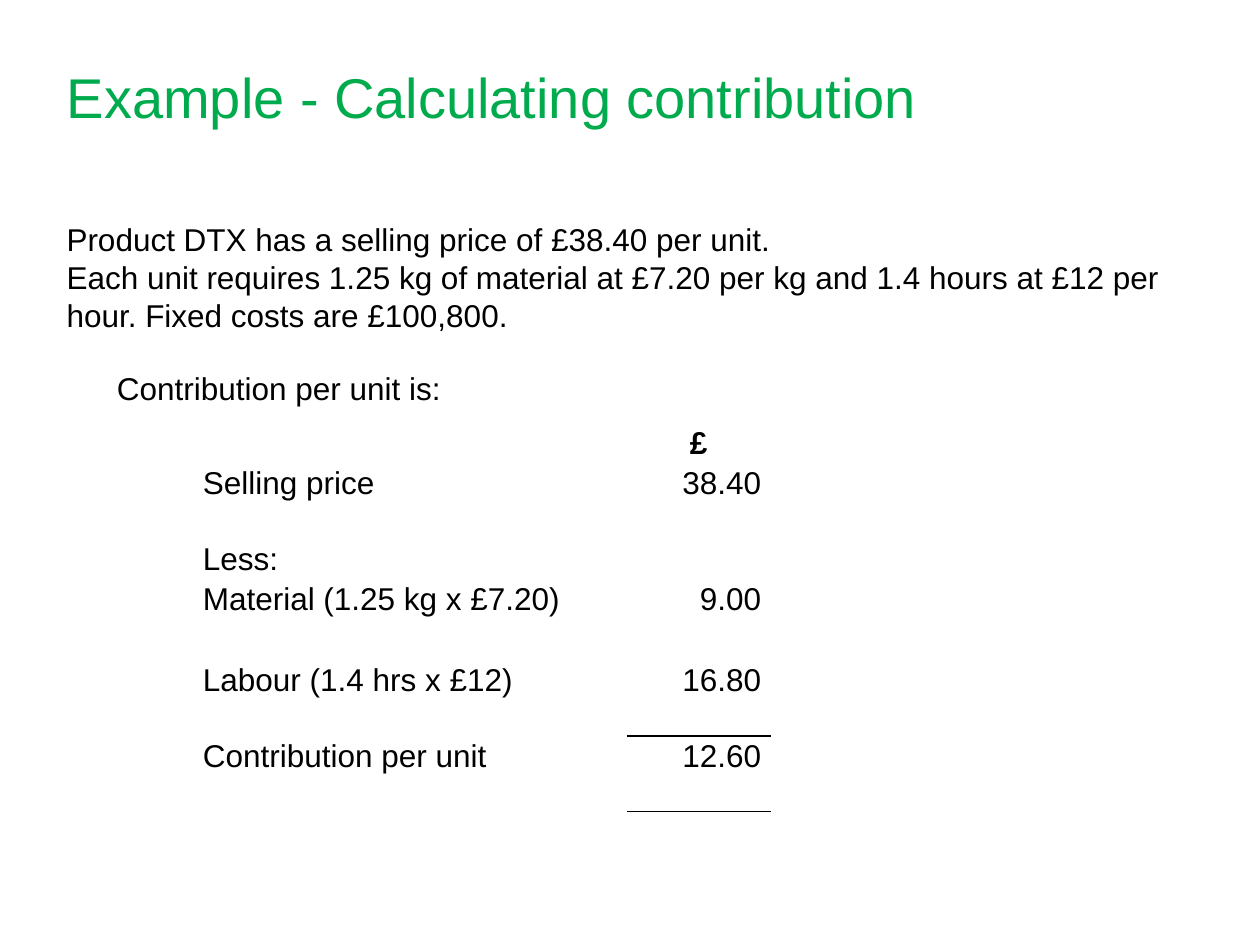
"""Build a slide that works out contribution per unit from a short costing example."""
from lxml import etree
from pptx import Presentation
from pptx import util as u
from pptx.dml.color import RGBColor
from pptx.enum import text
from pptx.oxml.ns import qn

COLOURS = {"heading": "00AB4E", "ink": "000000"}
WIDTH, HEIGHT = 10, 7.5
MARGIN = 0.043 * WIDTH
CONTENT = WIDTH - 2 * MARGIN
LEFT, CENTRE, RIGHT = text.PP_ALIGN.LEFT, text.PP_ALIGN.CENTER, text.PP_ALIGN.RIGHT


def write(paragraph, words, size=18, colour="ink", bold=False):
    span = paragraph.add_run()
    span.text = words
    span.font.name = "Arial"
    span.font.size = u.Pt(size)
    span.font.bold = bold
    span.font.color.rgb = RGBColor.from_string(COLOURS[colour])


def rule(cell, side):
    line = etree.SubElement(cell._tc.get_or_add_tcPr(), qn(f"a:{side}"), w=str(u.Pt(1)))
    fill = etree.SubElement(line, qn("a:solidFill"))
    etree.SubElement(fill, qn("a:srgbClr"), val=COLOURS["ink"])


deck = Presentation()
deck.slide_width, deck.slide_height = u.Inches(WIDTH), u.Inches(HEIGHT)
page = deck.slides.add_slide(deck.slide_layouts[5])

title = page.shapes.title
title.left, title.top = u.Inches(MARGIN), u.Inches(0.13)
title.width, title.height = u.Inches(CONTENT), u.Inches(1.26)
title.text_frame.vertical_anchor = text.MSO_ANCHOR.MIDDLE
title.text_frame.paragraphs[0].alignment = LEFT
write(title.text_frame.paragraphs[0], "Example - Calculating contribution", 32, "heading")

passages = [
    (MARGIN, 1.7, CONTENT, 1.01, [
        "Product DTX has a selling price of £38.40 per unit.",
        "Each unit requires 1.25 kg of material at £7.20 per kg and 1.4 hours at £12 per hour. "
        "Fixed costs are £100,800.",
    ]),
    (0.83, 2.88, 4.65, 0.4, ["Contribution per unit is:"]),
]
for left, top, width, height, lines in passages:
    box = page.shapes.add_textbox(*map(u.Inches, (left, top, width, height)))
    frame = box.text_frame
    frame.word_wrap = True
    frame.auto_size = text.MSO_AUTO_SIZE.SHAPE_TO_FIT_TEXT
    for index, words in enumerate(lines):
        para = frame.add_paragraph() if index else frame.paragraphs[0]
        write(para, words)

statement = [
    (0.32, "", "£", []),
    (0.6, "Selling price", "38.40", []),
    (0.32, "Less:", "", []),
    (0.64, "Material (1.25 kg x £7.20)", "9.00", []),
    (0.6, "Labour (1.4 hrs x £12)", "16.80", ["lnB"]),
    (0.6, "Contribution per unit", "12.60", ["lnT", "lnB"]),
]
columns = [3.44, 1.13]
total_height = sum(entry[0] for entry in statement)
table = page.shapes.add_table(
    len(statement), len(columns),
    *map(u.Inches, (1.54, 3.36, sum(columns), total_height))).table
table.first_row = table.horz_banding = False
for column, width in zip(table.columns, columns):
    column.width = u.Inches(width)

for row, (height, label, amount, sides) in zip(table.rows, statement):
    row.height = u.Inches(height)
    amount_align = CENTRE if amount == "£" else RIGHT
    for cell, words, align in zip(row.cells, (label, amount), (LEFT, amount_align)):
        cell.margin_left = cell.margin_right = u.Inches(0.07)
        cell.margin_top = cell.margin_bottom = 0
        para = cell.text_frame.paragraphs[0]
        para.alignment = align
        para.line_spacing = 1.07
        para.font.size = u.Pt(18)
        if words:
            write(para, words, bold=words == "£")
    for side in sides:
        rule(row.cells[1], side)
    for cell in row.cells:
        cell.fill.background()

deck.save("out.pptx")
